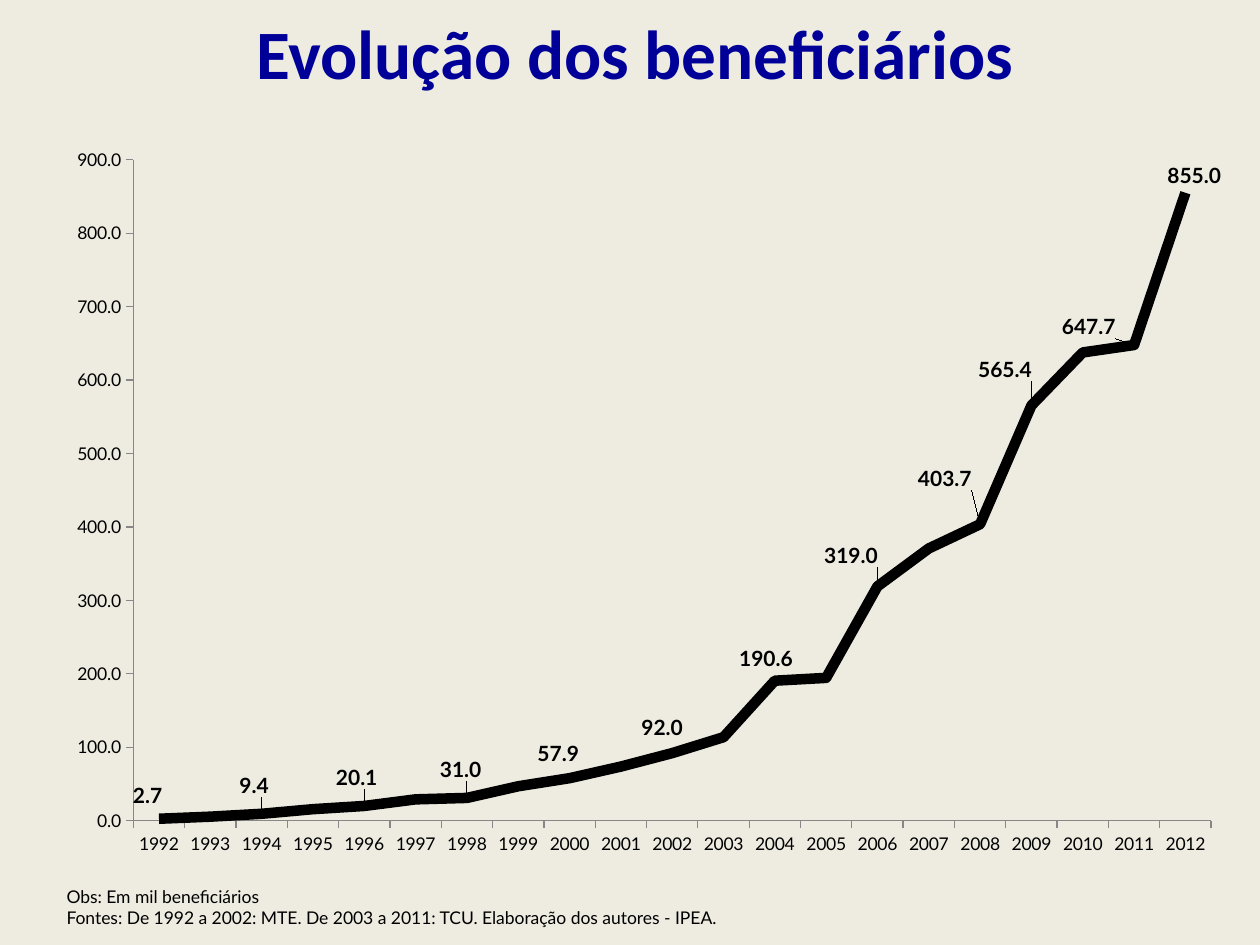
from lxml import etree
from pptx import Presentation
from pptx.chart.data import CategoryChartData
from pptx.dml.color import RGBColor
from pptx.enum.chart import XL_CHART_TYPE, XL_LABEL_POSITION, XL_TICK_MARK
from pptx.enum.text import MSO_ANCHOR, PP_ALIGN
from pptx.oxml.ns import qn
from pptx.util import Inches, Pt

LINE_CHART = XL_CHART_TYPE.LINE
ABOVE = XL_LABEL_POSITION.ABOVE
OUTSIDE = XL_TICK_MARK.OUTSIDE
MIDDLE, TOP = MSO_ANCHOR.MIDDLE, MSO_ANCHOR.TOP
CENTER, LEFT = PP_ALIGN.CENTER, PP_ALIGN.LEFT

CHART_WIDTH, CHART_HEIGHT = 9.38, 5.83
FIRST_YEAR = 1992
BENEFICIARIES = [
    2.7, 5.5, 9.4, 15.7, 20.1, 29.1, 31, 46.9, 57.9, 73.7, 92,
    113.7, 190.6, 194.5, 319, 370.7, 403.7, 565.4, 637.6, 647.7, 855,
]
LABEL_SHIFTS = {
    1992: (-0.09, -0.05), 1994: (-0.06, -0.09), 1996: (-0.06, -0.09),
    1998: (-0.05, -0.09), 2000: (-0.09, -0.06), 2002: (-0.08, -0.07),
    2004: (-0.07, -0.04), 2006: (-0.21, -0.11), 2008: (-0.28, -0.23),
    2009: (-0.21, -0.15), 2011: (-0.36, -0.01), 2012: (0.07, 0),
}


def color(hex_value):
    return RGBColor.from_string(hex_value)


def style_font(font, name, size, hex_value, bold=False):
    font.name, font.size, font.bold = name, Pt(size), bold
    font.color.rgb = color(hex_value)


def add_text(page, place, lines, font_style, align=LEFT, anchor=TOP):
    box = page.shapes.add_textbox(*map(Inches, place))
    frame = box.text_frame
    frame.word_wrap = True
    frame.vertical_anchor = anchor
    frame.text = "\n".join(lines)
    for para in frame.paragraphs:
        para.alignment = align
        style_font(para.font, *font_style)


def manual_layout(**settings):
    layout = etree.Element(qn("c:layout"))
    manual = etree.SubElement(layout, qn("c:manualLayout"))
    for name, value in settings.items():
        etree.SubElement(manual, qn(f"c:{name}")).set("val", str(value))
    return layout


def place_plot(chart):
    plot_area = chart.plots[0]._element.getparent()
    for layout in plot_area.findall(qn("c:layout")):
        plot_area.remove(layout)
    plot_area.insert(0, manual_layout(
        layoutTarget="inner", xMode="edge", yMode="edge",
        x=0.067, y=0.034, w=0.912, h=0.9))


def style_axis(axis):
    axis.has_major_gridlines = False
    axis.major_tick_mark = OUTSIDE
    axis.format.line.color.rgb = color("878787")
    axis.format.line.width = Pt(0.75)
    style_font(axis.tick_labels.font, "Lato", 10, "000000")


def label_points(series):
    series.data_labels.show_value = False
    for year, (right, down) in LABEL_SHIFTS.items():
        label = series.points[year - FIRST_YEAR].data_label
        style_font(label.font, "Lato", 12, "000000", True)
        label.position = ABOVE
    for element, (right, down) in zip(series._element.iter(qn("c:dLbl")), LABEL_SHIFTS.values()):
        element.insert(1, manual_layout(
            x=round(right / CHART_WIDTH, 4), y=round(down / CHART_HEIGHT, 4)))


def add_line_chart(page):
    chart_data = CategoryChartData(number_format="0.0")
    chart_data.categories = [str(FIRST_YEAR + step) for step in range(len(BENEFICIARIES))]
    chart_data.add_series("Series 1", BENEFICIARIES)
    place = map(Inches, (0.43, 1.07, CHART_WIDTH, CHART_HEIGHT))
    chart = page.shapes.add_chart(LINE_CHART, *place, chart_data).chart
    chart.has_legend = chart.has_title = False
    style_font(chart.font, "Lato", 10, "000000")
    chart.plots[0].vary_by_categories = False
    place_plot(chart)

    style_axis(chart.category_axis)
    values = chart.value_axis
    style_axis(values)
    values.minimum_scale, values.maximum_scale, values.major_unit = 0, 900, 100
    values.tick_labels.number_format = "0.0"
    values.tick_labels.number_format_is_linked = False

    series = chart.plots[0].series[0]
    series.smooth = False
    series.format.line.color.rgb = color("000000")
    series.format.line.width = Pt(6)
    label_points(series)


def main():
    deck = Presentation()
    deck.slide_width, deck.slide_height = Inches(10), Inches(7.5)
    page = deck.slides.add_slide(deck.slide_layouts[6])
    page.background.fill.solid()
    page.background.fill.fore_color.rgb = color("EEECE1")
    add_text(page, (0.43, 6.98, 9.06, 0.44), [
        "Obs: Em mil beneficiários",
        "Fontes: De 1992 a 2002: MTE. De 2003 a 2011: TCU. Elaboração dos autores - IPEA.",
    ], ("Lato", 10, "000000"))
    add_line_chart(page)
    add_text(page, (0.54, 0.03, 9, 0.77), ["Evolução dos beneficiários"],
             ("Calibri", 39.6, "000099", True), CENTER, MIDDLE)
    deck.save("out.pptx")


if __name__ == "__main__":
    main()
